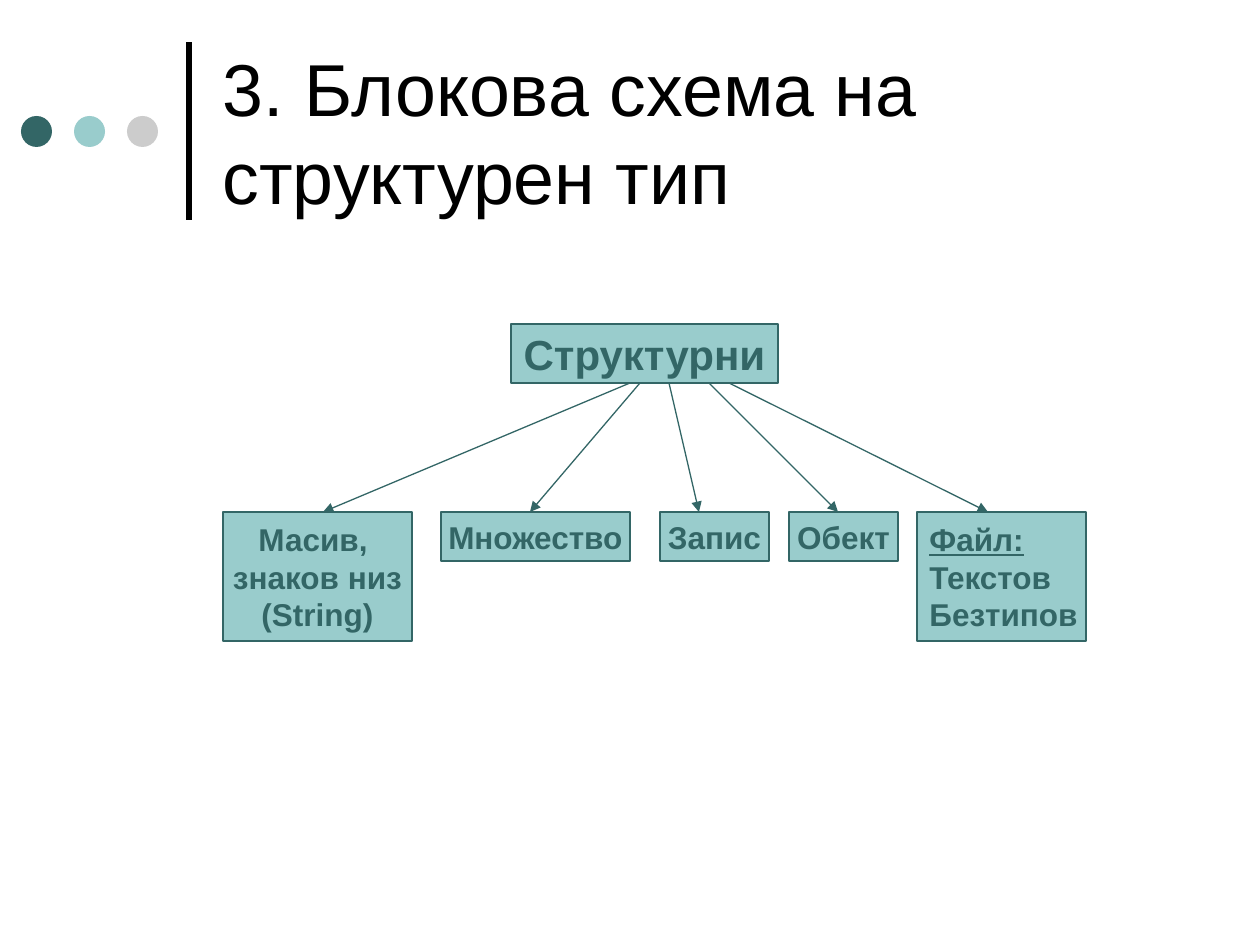
from lxml.etree import SubElement
from pptx import Presentation
from pptx.dml.color import RGBColor
from pptx.enum.shapes import MSO_CONNECTOR, MSO_SHAPE
from pptx.enum.text import MSO_ANCHOR, MSO_AUTO_SIZE, PP_ALIGN
from pptx.oxml.ns import qn
from pptx.util import Pt

PX = 914400 / 126
FONT = "Arial"
COLORS = {"dark": "336666", "light": "99CCCC", "grey": "CCCCCC", "black": "000000"}

TITLE = "3. Блокова схема на структурен тип"
ROOT = ("Структурни", 511, 324, 267, 59)
CHILD_TOP = 512
# text, left, width, height, alignment, arrow start x, arrow end x
CHILDREN = [
    ("Масив, \nзнаков низ\n(String)", 223, 189, 129, PP_ALIGN.CENTER, 630, 323),
    ("Множество", 441, 189, 49, PP_ALIGN.CENTER, 640, 530),
    ("Запис", 660, 109, 49, PP_ALIGN.CENTER, 669, 699),
    ("Обект", 789, 109, 49, PP_ALIGN.CENTER, 709, 838),
    ("Файл:\nТекстов\nБезтипов", 917, 169, 129, PP_ALIGN.LEFT, 729, 988),
]
DOTS = ["dark", "light", "grey"]
DOT_LEFT, DOT_TOP, DOT_SIZE, DOT_STEP = 21, 116, 31, 53


def px(value):
    return round(value * PX)


def rgb(name):
    return RGBColor.from_string(COLORS[name])


def add_filled(slide, kind, left, top, width, height, fill):
    shape = slide.shapes.add_shape(kind, px(left), px(top), px(width), px(height))
    shape.shadow.inherit = False
    shape.fill.solid()
    shape.fill.fore_color.rgb = rgb(fill)
    return shape


def format_text(text_frame, size, color, bold, alignment):
    for paragraph in text_frame.paragraphs:
        paragraph.alignment = alignment
        for run in paragraph.runs:
            run.font.name = FONT
            run.font.size = Pt(size)
            run.font.bold = bold
            run.font.color.rgb = rgb(color)


def add_box(slide, text, left, top, width, height, size, alignment):
    box = add_filled(slide, MSO_SHAPE.RECTANGLE, left, top, width, height, "light")
    box.line.color.rgb = rgb("dark")
    box.line.width = Pt(0.75)
    text_frame = box.text_frame
    text_frame.text = text
    text_frame.word_wrap = False
    text_frame.vertical_anchor = MSO_ANCHOR.MIDDLE
    format_text(text_frame, size, "dark", True, alignment)
    return box


def add_line(slide, start, end, color, width, arrow=False):
    points = [px(value) for value in (*start, *end)]
    line = slide.shapes.add_connector(MSO_CONNECTOR.STRAIGHT, *points)
    line.line.color.rgb = rgb(color)
    line.line.width = Pt(width)
    if arrow:
        SubElement(line.line._get_or_add_ln(), qn("a:tailEnd"), type="triangle")
    SubElement(line._element.spPr, qn("a:effectLst"))


def add_title(slide):
    title = slide.shapes.title
    title.left, title.top, title.width, title.height = map(px, (210, 26, 966, 210))
    text_frame = title.text_frame
    text_frame.text = TITLE
    text_frame.word_wrap = True
    text_frame.auto_size = MSO_AUTO_SIZE.NONE
    text_frame.vertical_anchor = MSO_ANCHOR.MIDDLE
    format_text(text_frame, 42, "black", False, PP_ALIGN.LEFT)


def add_decoration(slide):
    add_line(slide, (189, 220), (189, 42), "black", 3)
    for index, color in enumerate(DOTS):
        left = DOT_LEFT + index * DOT_STEP
        dot = add_filled(slide, MSO_SHAPE.OVAL, left, DOT_TOP, DOT_SIZE, DOT_SIZE, color)
        dot.line.fill.background()


def add_diagram(slide):
    add_box(slide, *ROOT, 24, PP_ALIGN.CENTER)
    root_bottom = ROOT[2] + ROOT[4]
    for text, left, width, height, alignment, start_x, end_x in CHILDREN:
        box = add_box(slide, text, left, CHILD_TOP, width, height, 18, alignment)
        if text.startswith("Файл"):
            box.text_frame.paragraphs[0].runs[0].font.underline = True
        add_line(slide, (start_x, root_bottom), (end_x, CHILD_TOP), "dark", 0.75, arrow=True)


def main():
    presentation = Presentation()
    presentation.slide_width, presentation.slide_height = px(1260), px(945)
    slide = presentation.slides.add_slide(presentation.slide_layouts[5])
    add_decoration(slide)
    add_diagram(slide)
    add_title(slide)
    presentation.save("out.pptx")


if __name__ == "__main__":
    main()
